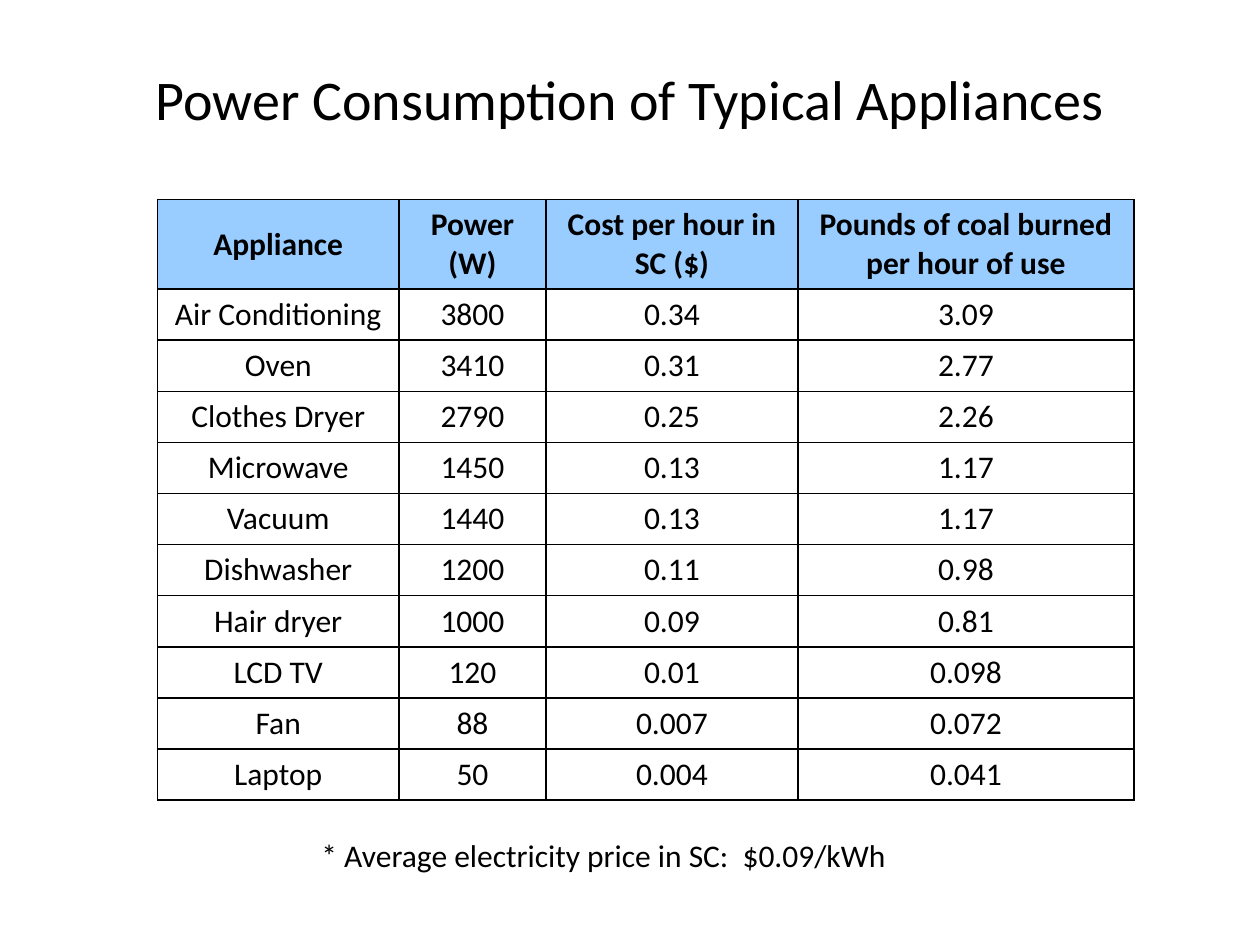
from pptx import Presentation
from pptx.dml.color import RGBColor
from pptx.enum.text import MSO_ANCHOR as Anchor, PP_ALIGN as Align
from pptx.oxml.ns import qn
from pptx.util import Pt
from lxml.etree import SubElement

BLACK = RGBColor(0x00, 0x00, 0x00)
WHITE = RGBColor(0xFF, 0xFF, 0xFF)
HEADER_BLUE = RGBColor(0x99, 0xCC, 0xFF)
FONT = "Calibri"
BODY_SIZE = 18
TITLE_SIZE = 32
HEADER_HEIGHT = 51.2
ROW_HEIGHT = 29.2
COLUMN_WIDTHS = (138, 84, 144, 192)
HEADERS = ("Appliance", "Power (W)", "Cost per hour in SC ($)",
           "Pounds of coal burned per hour of use")
APPLIANCES = (
    ("Air Conditioning", "3800", "0.34", "3.09"),
    ("Oven", "3410", "0.31", "2.77"),
    ("Clothes Dryer", "2790", "0.25", "2.26"),
    ("Microwave", "1450", "0.13", "1.17"),
    ("Vacuum", "1440", "0.13", "1.17"),
    ("Dishwasher", "1200", "0.11", "0.98"),
    ("Hair dryer", "1000", "0.09", "0.81"),
    ("LCD TV", "120", "0.01", "0.098"),
    ("Fan", "88", "0.007", "0.072"),
    ("Laptop", "50", "0.004", "0.041"),
)


def set_text(text_frame, text, size, bold=False):
    text_frame.text = text
    paragraph = text_frame.paragraphs[0]
    paragraph.alignment = Align.CENTER
    font = paragraph.runs[0].font
    font.name = FONT
    font.size = Pt(size)
    font.bold = bold
    font.color.rgb = BLACK


def add_text(slide, text, left, top, width, height, size, anchor=Anchor.TOP):
    text_frame = slide.shapes.add_textbox(
        Pt(left), Pt(top), Pt(width), Pt(height)).text_frame
    text_frame.word_wrap = True
    text_frame.vertical_anchor = anchor
    set_text(text_frame, text, size)


def add_borders(cell):
    properties = cell._tc.get_or_add_tcPr()
    for index, side in enumerate(("a:lnL", "a:lnR", "a:lnT", "a:lnB")):
        line = properties.makeelement(qn(side), {"w": str(Pt(1))})
        fill = SubElement(line, qn("a:solidFill"))
        SubElement(fill, qn("a:srgbClr"), val=str(BLACK))
        properties.insert(index, line)


def fill_cell(cell, text, color, bold):
    cell.vertical_anchor = Anchor.MIDDLE
    cell.fill.solid()
    cell.fill.fore_color.rgb = color
    set_text(cell.text_frame, text, BODY_SIZE, bold)
    add_borders(cell)


def add_appliance_table(slide, left, top):
    rows = (HEADERS, *APPLIANCES)
    height = HEADER_HEIGHT + ROW_HEIGHT * len(APPLIANCES)
    table = slide.shapes.add_table(
        len(rows), len(HEADERS), Pt(left), Pt(top),
        Pt(sum(COLUMN_WIDTHS)), Pt(height)).table
    table.horz_banding = False
    for column, width in zip(table.columns, COLUMN_WIDTHS):
        column.width = Pt(width)
    for index, (row, values) in enumerate(zip(table.rows, rows)):
        is_header = index == 0
        row.height = Pt(HEADER_HEIGHT if is_header else ROW_HEIGHT)
        for cell, value in zip(row.cells, values):
            fill_cell(cell, value, HEADER_BLUE if is_header else WHITE, is_header)


def main():
    """Build the appliance power consumption slide."""
    presentation = Presentation()
    presentation.slide_width = Pt(720)
    presentation.slide_height = Pt(540)
    slide = presentation.slides.add_slide(presentation.slide_layouts[6])
    add_appliance_table(slide, 90, 114)
    add_text(slide, "* Average electricity price in SC:  $0.09/kWh",
             72, 474, 546, 29, BODY_SIZE)
    add_text(slide, "Power Consumption of Typical Appliances",
             36, 21.6, 648, 68.4, TITLE_SIZE, Anchor.MIDDLE)
    presentation.save("out.pptx")


if __name__ == "__main__":
    main()
